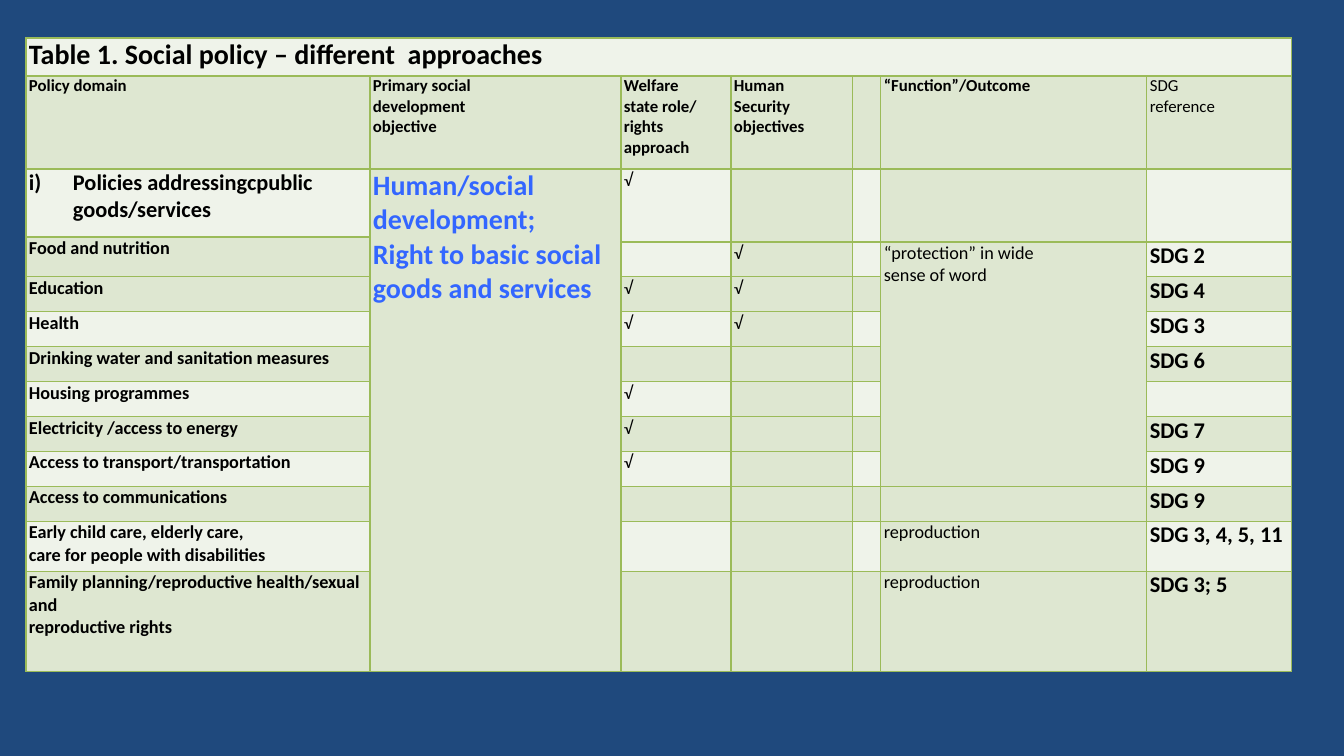
from pptx import Presentation
from pptx import util as u
from pptx.dml.color import RGBColor
from pptx.enum import text
from pptx.oxml import parse_xml
from pptx.oxml.ns import nsdecls

NAVY = RGBColor(0x1F, 0x49, 0x7D)
LIGHT = RGBColor(0xEF, 0xF3, 0xEA)
SAGE = RGBColor(0xDE, 0xE7, 0xD1)
GREEN = RGBColor(0x9B, 0xBB, 0x59)
BLUE = RGBColor(0x33, 0x66, 0xFF)
BLACK = RGBColor(0, 0, 0)

SCALE = 914400 / 100.8
COLS = [344, 251, 110, 122, 28, 266, 145]
ROWS = [38, 93, 68, 5] + [35] * 8 + [50, 100]
DOMAIN, GOAL, WELFARE, SAFETY, GAP, OUTCOME, SDG = range(7)
PLAIN_COLS = (GOAL, SAFETY, OUTCOME)

TITLE = {"size": u.Pt(20), "bold": True}
HEAD = {"size": u.Pt(12), "bold": True}
NOTE = {"size": u.Pt(12), "bold": False}
GROUP = {"size": u.Pt(16), "bold": True}
AIM = {"size": u.Pt(20), "bold": True, "color": BLUE}
LABEL = {"size": u.Pt(13), "bold": True}
BODY = {"size": u.Pt(13), "bold": False}

# first row, first column, last row, last column
SPANS = [(0, DOMAIN, 0, SDG), (2, GOAL, 13, GOAL), (3, DOMAIN, 4, DOMAIN),
         (4, OUTCOME, 10, OUTCOME)]
SPANS += [(2, col, 3, col) for col in range(WELFARE, SDG + 1)]

HEADS = [
    "Policy domain",
    "Primary social \ndevelopment \nobjective",
    "Welfare\nstate role/\nrights approach",
    "Human \nSecurity\nobjectives",
    "",
    "“Function”/Outcome",
]
DOMAINS = {
    3: "Food and nutrition",
    5: "Education",
    6: "Health",
    7: "Drinking water and sanitation measures",
    8: "Housing programmes",
    9: "Electricity /access to energy",
    10: "Access to transport/transportation",
    11: "Access to communications",
    12: "Early child care, elderly care,\ncare for people with disabilities",
    13: "Family planning/reproductive health/sexual and\nreproductive rights",
}
TICKS = {WELFARE: (2, 5, 6, 8, 9, 10), SAFETY: (4, 5, 6)}
RESULTS = {4: "“protection” in wide \nsense of word",
           12: "reproduction", 13: "reproduction"}
GOALS = {4: "2", 5: "4", 6: "3", 7: "6", 9: "7", 10: "9", 11: "9",
         12: "3, 4, 5, 11", 13: "3; 5"}


def px(num):
    return u.Emu(round(num * SCALE))


def style(cell, row, col):
    """Set insets, borders and the banded fill of one cell."""
    sides = {"margin_left": px(3), "margin_right": px(3),
             "margin_top": 0, "margin_bottom": 0}
    for name, val in sides.items():
        setattr(cell, name, val)
    props = cell._tc.get_or_add_tcPr()
    for side in "LRTB":
        props.append(parse_xml(
            f'<a:ln{side} {nsdecls("a")} w="12700"><a:solidFill>'
            f'<a:srgbClr val="{GREEN}"/></a:solidFill></a:ln{side}>'))
    cell.fill.solid()
    banded = row % 2 == 0 and (row == 0 or col not in PLAIN_COLS)
    cell.fill.fore_color.rgb = LIGHT if banded else SAGE


def write(cell, words, form, just=True):
    cell.text_frame.text = words
    for para in cell.text_frame.paragraphs:
        para.alignment = (text.PP_ALIGN.JUSTIFY if just
                          else text.PP_ALIGN.LEFT)
        for run in para.runs:
            font = run.font
            font.name = "Calibri"
            font.color.rgb = form.get("color", BLACK)
            for name in ("size", "bold"):
                setattr(font, name, form[name])


def number(cell):
    """Give the cell's first paragraph a hanging roman numeral."""
    props = cell.text_frame.paragraphs[0]._p.get_or_add_pPr()
    props.set("marL", str(px(44)))
    props.set("indent", str(-px(44)))
    props.append(parse_xml(
        f'<a:buAutoNum {nsdecls("a")} type="romanLcParenR"/>'))


def make_grid(slide):
    frame = slide.shapes.add_table(len(ROWS), len(COLS), px(26), px(38),
                                   px(sum(COLS)), px(sum(ROWS)))
    grid = frame.table
    grid.first_row = grid.horz_banding = False
    for col, width in enumerate(COLS):
        grid.columns[col].width = px(width)
    for row, height in enumerate(ROWS):
        grid.rows[row].height = px(height)
        for col in range(len(COLS)):
            style(grid.cell(row, col), row, col)
    for top, left, end, right in SPANS:
        grid.cell(top, left).merge(grid.cell(end, right))
    return grid


def fill_heads(grid):
    write(grid.cell(0, 0), "Table 1. Social policy – different  approaches",
          TITLE)
    for col, words in enumerate(HEADS):
        write(grid.cell(1, col), words, HEAD, col != DOMAIN)
    write(grid.cell(1, SDG), "SDG \nreference", NOTE)
    group = grid.cell(2, DOMAIN)
    write(group, "Policies addressingcpublic goods/services", GROUP, False)
    number(group)
    write(grid.cell(2, GOAL), "Human/social \ndevelopment;\n"
          "Right to basic social \ngoods and services", AIM)


def fill_body(grid):
    for row, words in DOMAINS.items():
        write(grid.cell(row, DOMAIN), words, LABEL, False)
    for col, rows in TICKS.items():
        for row in rows:
            write(grid.cell(row, col), "√", BODY)
    for row, words in RESULTS.items():
        write(grid.cell(row, OUTCOME), words, BODY)
    for row, goal in GOALS.items():
        write(grid.cell(row, SDG), f"SDG {goal}", GROUP)


def main():
    deck = Presentation()
    deck.slide_width, deck.slide_height = px(1344), px(756)
    slide = deck.slides.add_slide(deck.slide_layouts[6])
    back = slide.background.fill
    back.solid()
    back.fore_color.rgb = NAVY
    grid = make_grid(slide)
    fill_heads(grid)
    fill_body(grid)
    deck.save("out.pptx")


if __name__ == "__main__":
    main()
